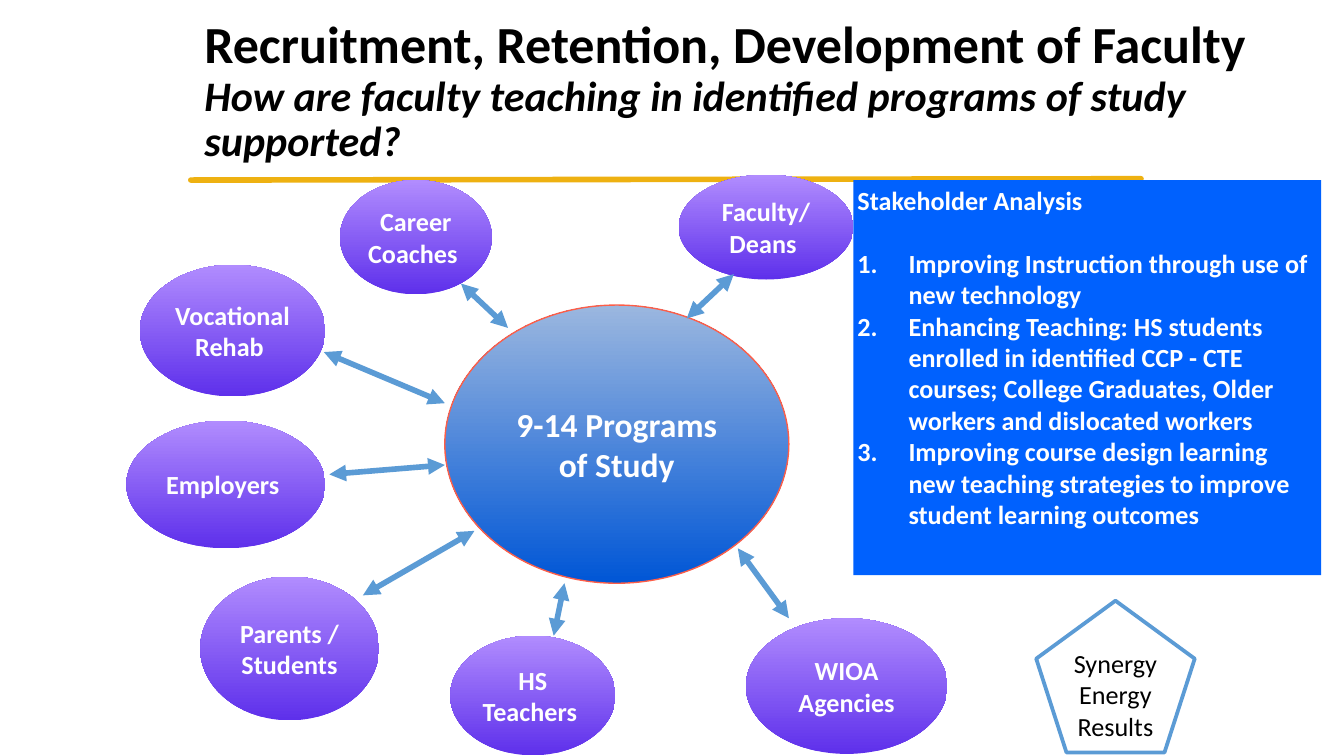
import pptx
import pptx.dml.color
import pptx.enum.shapes
import pptx.enum.text
import pptx.oxml.ns
import pptx.util
from lxml import etree
from pptx.util import Inches

HUES = {
    "white": "FFFFFF", "black": "000000", "gold": "EEB111", "box": "0061FE",
    "blue": "5B9BD5", "violet": "5E30EB", "lilac": "B18CFE",
    "deep": "0056D6", "pale": "9BB7DF", "red": "FD5E48",
}
KIND = pptx.enum.shapes.MSO_SHAPE
ALIGN = pptx.enum.text.PP_ALIGN
ANCHOR = pptx.enum.text.MSO_ANCHOR


def hue(name):
    return pptx.dml.color.RGBColor.from_string(HUES[name])


def add(parent, tag, **attrs):
    return etree.SubElement(parent, pptx.oxml.ns.qn(tag), attrs)


class Board:
    font = "Calibri"
    inset = Inches(0.03)

    def __init__(self, slide):
        self.slide = slide

    def style(self, run, size, color, bold=True, italic=None):
        font = run.font
        font.name, font.size = self.font, pptx.util.Pt(size)
        font.bold, font.italic = bold, italic
        font.color.rgb = hue(color)

    def place(self, shape, left, top, width, height):
        shape.left, shape.top = Inches(left), Inches(top)
        shape.width, shape.height = Inches(width), Inches(height)

    def pad(self, frame, anchor):
        frame.margin_left = frame.margin_right = self.inset
        frame.margin_top = frame.margin_bottom = self.inset
        frame.word_wrap = True
        frame.auto_size = pptx.enum.text.MSO_AUTO_SIZE.NONE
        frame.vertical_anchor = anchor

    def title(self, head, sub, box):
        shape = self.slide.shapes.title
        self.place(shape, *box)
        frame = shape.text_frame
        frame.auto_size = pptx.enum.text.MSO_AUTO_SIZE.NONE
        frame.vertical_anchor = ANCHOR.MIDDLE
        para = frame.paragraphs[0]
        para.text = head + "\v" + sub
        para.alignment, para.line_spacing = ALIGN.LEFT, 0.9
        self.style(para.runs[0], 27.9, "black")
        self.style(para.runs[1], 22.5, "black", italic=True)

    def panel(self, head, items, box):
        shape = self.slide.placeholders[1]
        self.place(shape, *box)
        shape.fill.solid()
        shape.fill.fore_color.rgb = hue("box")
        frame = shape.text_frame
        frame.text = "\n".join([head] + items)
        self.pad(frame, ANCHOR.TOP)
        for num, para in enumerate(frame.paragraphs):
            dent = Inches(0.38) if num else 0
            props = para._p.get_or_add_pPr()
            props.set("marL", str(dent))
            props.set("indent", str(-dent))
            if num:
                add(props, "a:buFont", typeface="+mj-lt")
                add(props, "a:buAutoNum", type="arabicPeriod")
            else:
                add(props, "a:buNone")
            para.space_before = pptx.util.Pt(0)
            para.space_after = pptx.util.Pt(0 if num else 17)
            self.style(para.runs[0], 14, "white")

    def shape(self, kind, text, box, fill, line=None, width=0.75,
              size=14, color="white", bold=True):
        shape = self.slide.shapes.add_shape(kind, 0, 0, 0, 0)
        self.place(shape, *box)
        shape.shadow.inherit = False
        # Two fill names make an upward gradient
        if len(fill) == 2:
            shape.fill.gradient()
            shape.fill.gradient_angle = 90
            for stop, name in zip(shape.fill.gradient_stops, fill):
                stop.color.rgb = hue(name)
        else:
            shape.fill.solid()
            shape.fill.fore_color.rgb = hue(fill[0])
        if line:
            shape.line.color.rgb = hue(line)
            shape.line.width = pptx.util.Pt(width)
        else:
            shape.line.fill.background()
        frame = shape.text_frame
        frame.text = text
        self.pad(frame, ANCHOR.MIDDLE)
        for para in frame.paragraphs:
            para.alignment = ALIGN.CENTER
            self.style(para.runs[0], size, color, bold)

    def line(self, ends, color, heads=False):
        link = self.slide.shapes.add_connector(
            pptx.enum.shapes.MSO_CONNECTOR.STRAIGHT, *map(Inches, ends))
        link.line.color.rgb = hue(color)
        link.line.width = pptx.util.Pt(3)
        if heads:
            for tag in ("a:headEnd", "a:tailEnd"):
                add(link.line._get_or_add_ln(), tag, type="triangle")
        add(link.element.spPr, "a:effectLst")
        return link


def main():
    deck = pptx.Presentation()
    # Widescreen, 16 to 9
    deck.slide_width = Inches(10)
    deck.slide_height = deck.slide_width * 9 // 16
    board = Board(deck.slides.add_slide(deck.slide_layouts[1]))

    # Gold rule with round ends, sent behind everything else
    rule = board.line((1.42, 1.34, 8.49, 1.33), "gold")
    rule.line._get_or_add_ln().set("cap", "rnd")
    rule.element.getparent().insert(2, rule.element)

    # Title and numbered panel
    board.title("Recruitment, Retention, Development of Faculty",
                "How are faculty teaching in identified programs of study supported?",
                (1.42, 0.14, 8.69, 1.09))
    board.panel("Stakeholder Analysis", [
        "Improving Instruction through use of new technology",
        "Enhancing Teaching: HS students enrolled in identified CCP - CTE "
        "courses; College Graduates, Older workers and dislocated workers",
        "Improving course design learning new teaching strategies to improve "
        "student learning outcomes",
    ], (6.35, 1.34, 3.48, 2.94))

    # Hub, then each group with its two-way arrow
    board.shape(KIND.OVAL, "9-14 Programs of Study", (3.31, 2.27, 2.56, 2.07),
                ("deep", "pale"), line="red", size=18)
    groups = [
        ("Career Coaches ", (2.53, 1.34, 1.13, 0.85), (3.43, 2.11, 3.78, 2.44)),
        ("Vocational Rehab ", (1.04, 1.97, 1.38, 0.98), (2.41, 2.62, 3.31, 3)),
        ("Employers ", (0.94, 3.13, 1.48, 0.95), (2.45, 3.53, 3.31, 3.46)),
        ("Parents / Students", (1.49, 4.29, 1.33, 1.07), (3.53, 3.95, 2.7, 4.43)),
        ("HS Teachers ", (3.35, 4.73, 1.23, 0.89), (4.2, 4.34, 4.12, 4.73)),
        ("WIOA Agencies", (5.55, 4.6, 1.5, 1.01), (5.49, 4.08, 5.87, 4.6)),
        ("Faculty/ Deans ", (5.05, 1.3, 1.3, 0.78), (5.46, 2.04, 5.11, 2.37)),
    ]
    for text, box, ends in groups:
        board.shape(KIND.OVAL, text, box, ("violet", "lilac"))
        board.line(ends, "blue", heads=True)

    # Outcome
    board.shape(KIND.REGULAR_PENTAGON, "Synergy\nEnergy\nResults",
                (7.71, 4.47, 1.18, 1.13), ("white",), line="blue", width=2,
                color="black", bold=False)

    deck.save("out.pptx")


if __name__ == "__main__":
    main()
